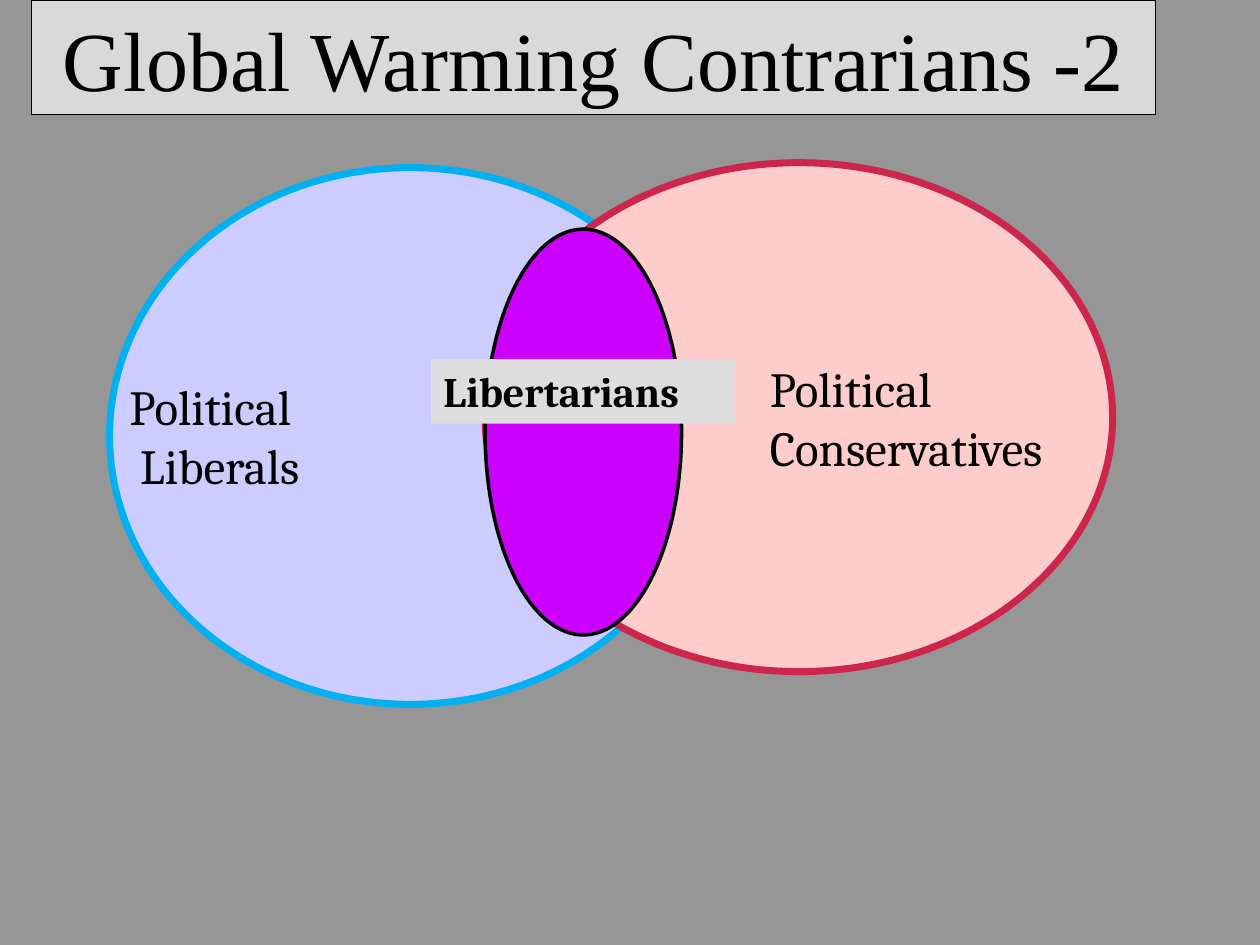
import pptx
import pptx.dml.color
import pptx.enum.shapes
import pptx.enum.text
import pptx.util

Cm = pptx.util.Cm
SHAPE = pptx.enum.shapes.MSO_SHAPE
ALIGN = pptx.enum.text.PP_ALIGN
ANCHOR = pptx.enum.text.MSO_ANCHOR

LABEL_FONT = {"name": "Cambria", "size": pptx.util.Pt(28)}
OVERLAP_FONT = {"name": "Cambria", "size": pptx.util.Pt(24), "bold": True}
TITLE_FONT = {"name": "Times New Roman", "size": pptx.util.Pt(48)}


def color(hex_string):
    return pptx.dml.color.RGBColor.from_string(hex_string)


def paint(fill, hex_string):
    fill.solid()
    fill.fore_color.rgb = color(hex_string)


def add_figure(shapes, kind, box, fill, outline=None, width=0):
    """Add a filled preset shape; box is left, top, width, height in cm."""
    figure = shapes.add_shape(kind, *map(Cm, box))
    figure.shadow.inherit = False
    paint(figure.fill, fill)
    if outline:
        figure.line.color.rgb = color(outline)
        figure.line.width = pptx.util.Pt(width)
    else:
        figure.line.fill.background()
    return figure


def write(holder, lines, font, align=ALIGN.LEFT, anchor=ANCHOR.TOP):
    frame = holder.text_frame
    frame.word_wrap = True
    frame.vertical_anchor = anchor
    frame.text = "\n".join(lines)
    for paragraph in frame.paragraphs:
        paragraph.alignment = align
        paragraph.font.color.rgb = color("000000")
        for run in paragraph.runs:
            run.font.color.rgb = color("000000")
            for key, value in font.items():
                setattr(run.font, key, value)


def add_label(shapes, box, lines):
    write(shapes.add_textbox(*map(Cm, box)), lines, LABEL_FONT)


def add_overlap(shapes):
    """Group the shared ellipse with its caption."""
    overlap = shapes.add_group_shape().shapes
    add_figure(overlap, SHAPE.OVAL, (9.78, 4.62, 3.96, 8.18), "CC00FF", "000000", 2)
    caption = add_figure(overlap, SHAPE.RECTANGLE, (8.69, 7.24, 6.12, 1.3), "DDDDDD")
    write(caption, ["Libertarians"], OVERLAP_FONT)


def main():
    deck = pptx.Presentation()
    deck.slide_width, deck.slide_height = Cm(25.4), Cm(19.05)
    slide = deck.slides.add_slide(deck.slide_layouts[6])
    paint(slide.background.fill, "969696")
    shapes = slide.shapes

    add_figure(shapes, SHAPE.OVAL, (2.21, 3.38, 12.12, 10.82), "CCCCFF", "00B0F0", 4)
    add_figure(shapes, SHAPE.OVAL, (9.78, 3.28, 12.65, 10.26), "FFCCCC", "CC264D", 4)
    add_label(shapes, (2.36, 7.47, 4.6, 2.64), ["Political", " Liberals"])
    add_label(shapes, (15.27, 7.11, 6.96, 2.62), ["Political", "Conservatives"])
    title = add_figure(shapes, SHAPE.RECTANGLE, (0.64, 0, 22.66, 2.31),
                       "D9D9D9", "000000", 0.75)
    write(title, ["Global Warming Contrarians -2"], TITLE_FONT,
          ALIGN.CENTER, ANCHOR.BOTTOM)
    add_overlap(shapes)

    deck.save("out.pptx")


if __name__ == "__main__":
    main()
